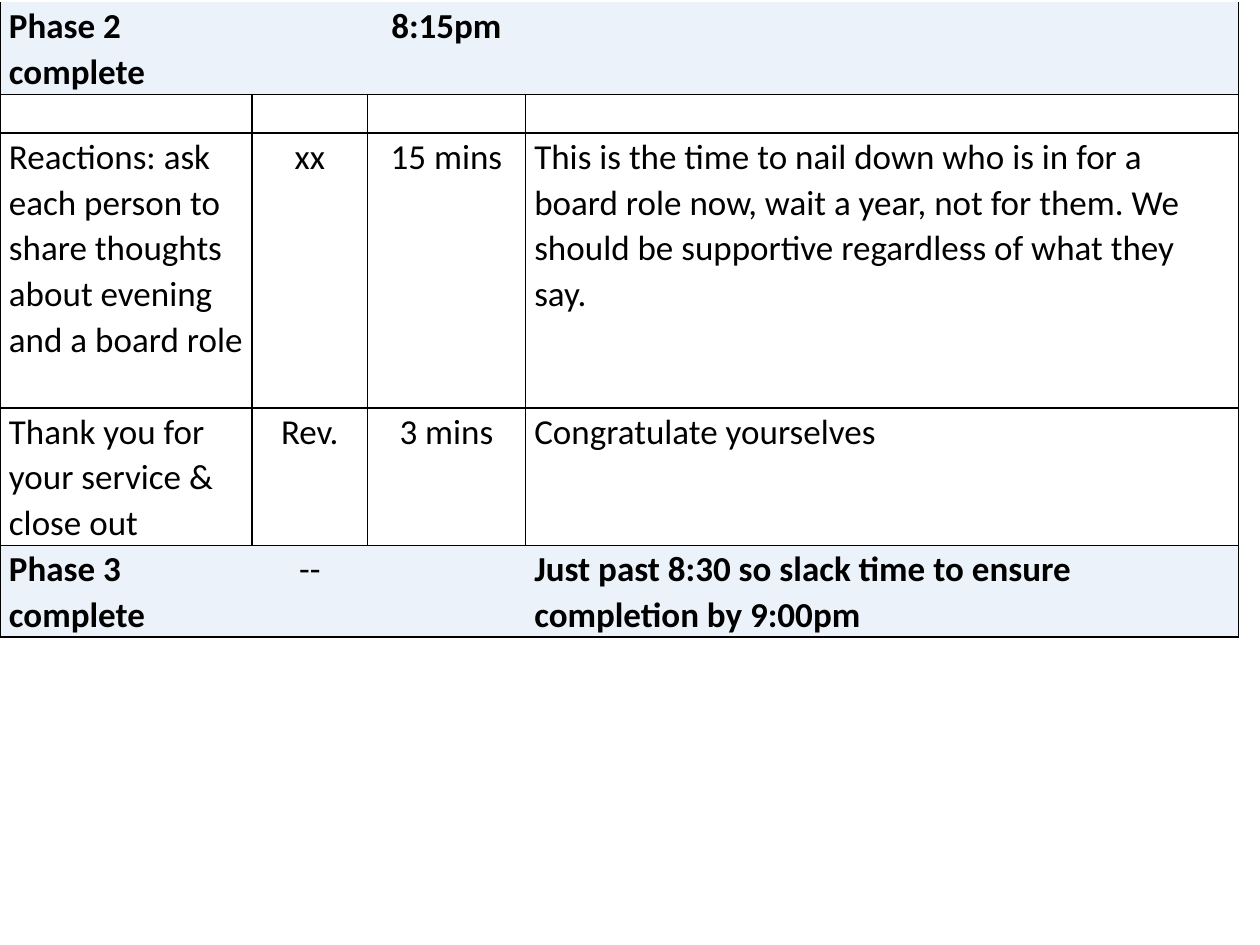
from dataclasses import dataclass

from lxml.etree import SubElement
from pptx import Presentation
from pptx.dml.color import RGBColor
from pptx.enum.text import PP_ALIGN as Align
from pptx.oxml.ns import qn
from pptx.util import Cm, Pt

BLACK = "000000"
PHASE_BLUE = "EBF2F9"
PLAIN_STYLE = "{2D5ABB26-0587-4C30-8999-92F81FD0307C}"
COLUMN_WIDTHS = (5.08, 2.33, 3.18, 14.38)
COLUMN_ALIGNS = (Align.LEFT, Align.CENTER, Align.CENTER, Align.LEFT)


@dataclass
class AgendaRow:
    height: float
    texts: tuple[str, str, str, str]
    is_phase: bool = False


AGENDA = (
    AgendaRow(1.85, ("Phase 2 complete", "", "8:15pm", ""), True),
    AgendaRow(0.78, ("", "", "", "")),
    AgendaRow(5.54, (
        "Reactions: ask each person to share thoughts about evening and a board role",
        "xx",
        "15 mins",
        "This is the time to nail down who is in for a board role now, wait a year, "
        "not for them. We should be supportive regardless of what they say.",
    )),
    AgendaRow(2.77, ("Thank you for your service & close out", "Rev.", "3 mins",
                     "Congratulate yourselves")),
    AgendaRow(1.85, ("Phase 3 complete", "--", "",
                     "Just past 8:30 so slack time to ensure completion by 9:00pm"), True),
)


def rgb(color: str) -> RGBColor:
    return RGBColor.from_string(color)


def set_borders(cell, sides: str) -> None:
    """Draw black lines on the given sides (letters of L, R, T, B), none elsewhere."""
    properties = cell._tc.get_or_add_tcPr()
    for position, side in enumerate("LRTB"):
        line = SubElement(properties, qn(f"a:ln{side}"), w=str(Pt(1)))
        if side in sides:
            fill = SubElement(line, qn("a:solidFill"))
            SubElement(fill, qn("a:srgbClr"), val=BLACK)
        else:
            SubElement(line, qn("a:noFill"))
        properties.insert(position, line)  # lines come before the fill


def write_text(cell, text: str, align: Align, bold: bool) -> None:
    cell.margin_left = cell.margin_right = Cm(0.18)
    cell.margin_top = cell.margin_bottom = 0
    paragraph = cell.text_frame.paragraphs[0]
    paragraph.text = text
    paragraph.alignment = align
    paragraph.line_spacing = 1.07
    font = paragraph.font
    font.name = "Calibri"
    font.size = Pt(20 if text else 16)
    font.bold = bold
    font.color.rgb = rgb(BLACK)


def fill_row(table, index: int, row: AgendaRow) -> None:
    table.rows[index].height = Cm(row.height)
    last_column = len(COLUMN_WIDTHS) - 1
    for column, (text, align) in enumerate(zip(row.texts, COLUMN_ALIGNS)):
        cell = table.cell(index, column)
        write_text(cell, text, align, row.is_phase and text != "--")
        sides = "B" if index == 0 else "TB"
        if row.is_phase:
            cell.fill.solid()
            cell.fill.fore_color.rgb = rgb(PHASE_BLUE)
            sides += {0: "L", last_column: "R"}.get(column, "")
        else:
            cell.fill.background()
            sides += "LR"
        set_borders(cell, sides)


def main() -> None:
    deck = Presentation()
    deck.slide_width, deck.slide_height = Cm(25.4), Cm(19.05)
    slide = deck.slides.add_slide(deck.slide_layouts[6])

    # Agenda table
    agenda = slide.shapes.add_table(
        len(AGENDA), len(COLUMN_WIDTHS), 0, Cm(0.05),
        Cm(sum(COLUMN_WIDTHS)), Cm(sum(row.height for row in AGENDA))).table
    agenda.first_row = agenda.horz_banding = False
    agenda._tbl.tblPr.find(qn("a:tableStyleId")).text = PLAIN_STYLE
    for column, width in zip(agenda.columns, COLUMN_WIDTHS):
        column.width = Cm(width)
    for index, row in enumerate(AGENDA):
        fill_row(agenda, index, row)

    deck.save("out.pptx")


if __name__ == "__main__":
    main()
